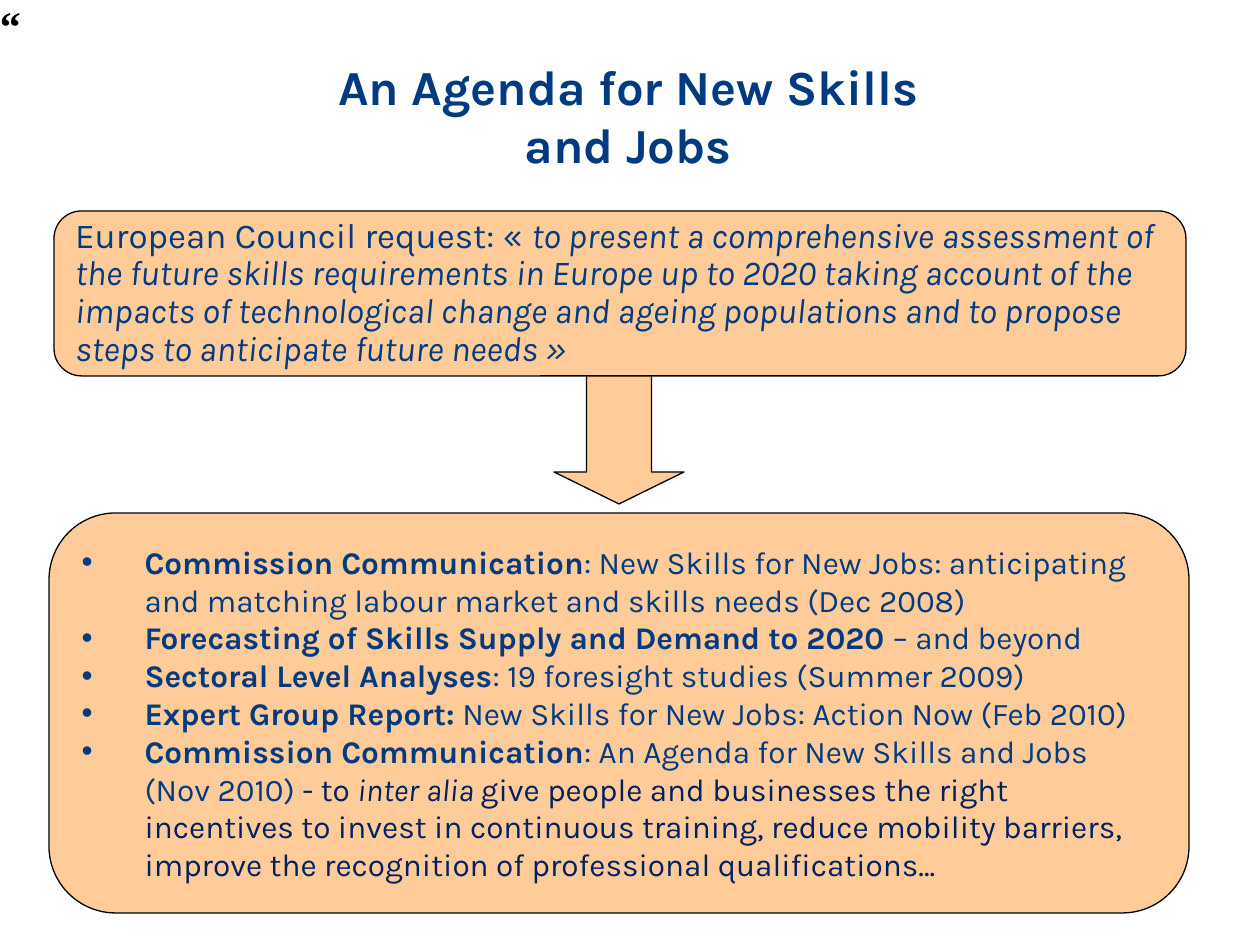
from lxml import etree
from pptx import Presentation
from pptx.dml.color import RGBColor
from pptx.enum.shapes import MSO_SHAPE
from pptx.enum.text import MSO_ANCHOR, PP_ALIGN
from pptx.oxml.ns import qn
from pptx.util import Emu, Pt

ROUNDED = MSO_SHAPE.ROUNDED_RECTANGLE
DOWN_ARROW = MSO_SHAPE.DOWN_ARROW
TOP, MIDDLE = MSO_ANCHOR.TOP, MSO_ANCHOR.MIDDLE
LEFT, CENTER = PP_ALIGN.LEFT, PP_ALIGN.CENTER

SCALE = 914400 / 126  # EMU per px
COLORS = {"blue": "003A80", "navy": "002060", "peach": "FFCC99", "black": "000000"}


def px(length):
    return Emu(round(length * SCALE))


def color(name):
    return RGBColor.from_string(COLORS[name])


def write(frame, paragraphs, size, font="Karla", ink="blue", align=LEFT,
          anchor=MIDDLE, insets=(13, 6), spacing=None, hanging=0):
    """Fill a frame; each paragraph is a list of (text, format) runs, "\\n" breaks a line."""
    frame.word_wrap = True
    frame.vertical_anchor = anchor
    frame.margin_left = frame.margin_right = px(insets[0])
    frame.margin_top = frame.margin_bottom = px(insets[1])
    for index, runs in enumerate(paragraphs):
        paragraph = frame.add_paragraph() if index else frame.paragraphs[0]
        if hanging:
            props = paragraph._p.get_or_add_pPr()
            props.set("marL", str(px(hanging)))
            props.set("indent", str(-px(hanging)))
            etree.SubElement(props, qn("a:buFont")).set("typeface", "Arial")
            etree.SubElement(props, qn("a:buChar")).set("char", "•")
        paragraph.alignment = align
        if spacing:
            paragraph.line_spacing = spacing
        for text, style in runs:
            for row, line in enumerate(text.split("\n")):
                if row:
                    paragraph.add_line_break()
                run = paragraph.add_run()
                run.text = line
                run.font.name = font
                run.font.size = Pt(size)
                run.font.bold = style.get("bold", False)
                run.font.italic = style.get("italic", False)
                run.font.color.rgb = color(style.get("ink", ink))


class AgendaSlide:
    def __init__(self, deck):
        self.slide = deck.slides.add_slide(deck.slide_layouts[6])

    def label(self, box, paragraphs, **text_format):
        area = self.slide.shapes.add_textbox(*map(px, box))
        write(area.text_frame, paragraphs, **text_format)

    def block(self, kind, box, paragraphs=(), **text_format):
        shape = self.slide.shapes.add_shape(kind, *map(px, box))
        shape.shadow.inherit = False
        shape.fill.solid()
        shape.fill.fore_color.rgb = color("peach")
        shape.line.color.rgb = color("black")
        shape.line.width = Pt(0.75)
        if paragraphs:
            write(shape.text_frame, paragraphs, **text_format)
        return shape


BOLD, PLAIN, ITALIC = {"bold": True}, {}, {"italic": True}
NAVY = {"ink": "navy"}

TITLE = [[("An Agenda for New Skills\nand Jobs", BOLD)]]
QUOTE_MARK = [[("“", BOLD)]]
REQUEST = [[
    ("European Council request: « ", PLAIN),
    ("to present a comprehensive assessment of the future skills requirements in "
     "Europe up to 2020 taking account of the impacts of technological change and "
     "ageing populations and to propose steps to anticipate future needs »", ITALIC),
]]
RESPONSES = [
    [("Commission Communication", BOLD),
     (": New Skills for New Jobs: anticipating and matching labour market and "
      "skills needs (Dec 2008)", PLAIN)],
    [("Forecasting of Skills Supply and Demand to 2020 ", BOLD),
     ("– and beyond", PLAIN)],
    [("Sectoral Level Analyses", BOLD),
     (": 19 foresight studies (Summer 2009)", PLAIN)],
    [("Expert Group Report:", BOLD),
     (" New Skills for New Jobs: Action Now (Feb 2010)", PLAIN)],
    [("Commission Communication", BOLD),
     (": An Agenda for New Skills and Jobs (Nov 2010) ", PLAIN),
     ("- to ", NAVY),
     ("inter alia ", NAVY | ITALIC),
     ("give people and businesses the right incentives to invest in continuous "
      "training, reduce mobility barriers, improve the recognition of "
      "professional qualifications...", NAVY)],
]


def main():
    deck = Presentation()
    deck.slide_width, deck.slide_height = px(1260), px(945)
    agenda = AgendaSlide(deck)
    agenda.label((61, 50, 1134, 158), TITLE, size=28, align=CENTER, anchor=TOP)
    agenda.label((0, 0, 60, 50), QUOTE_MARK, size=24, font="Times New Roman",
                 ink="black", anchor=TOP, insets=(0, 0))
    agenda.block(ROUNDED, (54, 211, 1132, 165), REQUEST, size=20, spacing=0.9)
    arrow = agenda.block(DOWN_ARROW, (554, 376, 130, 128))
    arrow.adjustments[1] = 0.25
    agenda.block(ROUNDED, (49, 513, 1140, 400), RESPONSES, size=18, hanging=63)
    deck.save("out.pptx")


if __name__ == "__main__":
    main()
